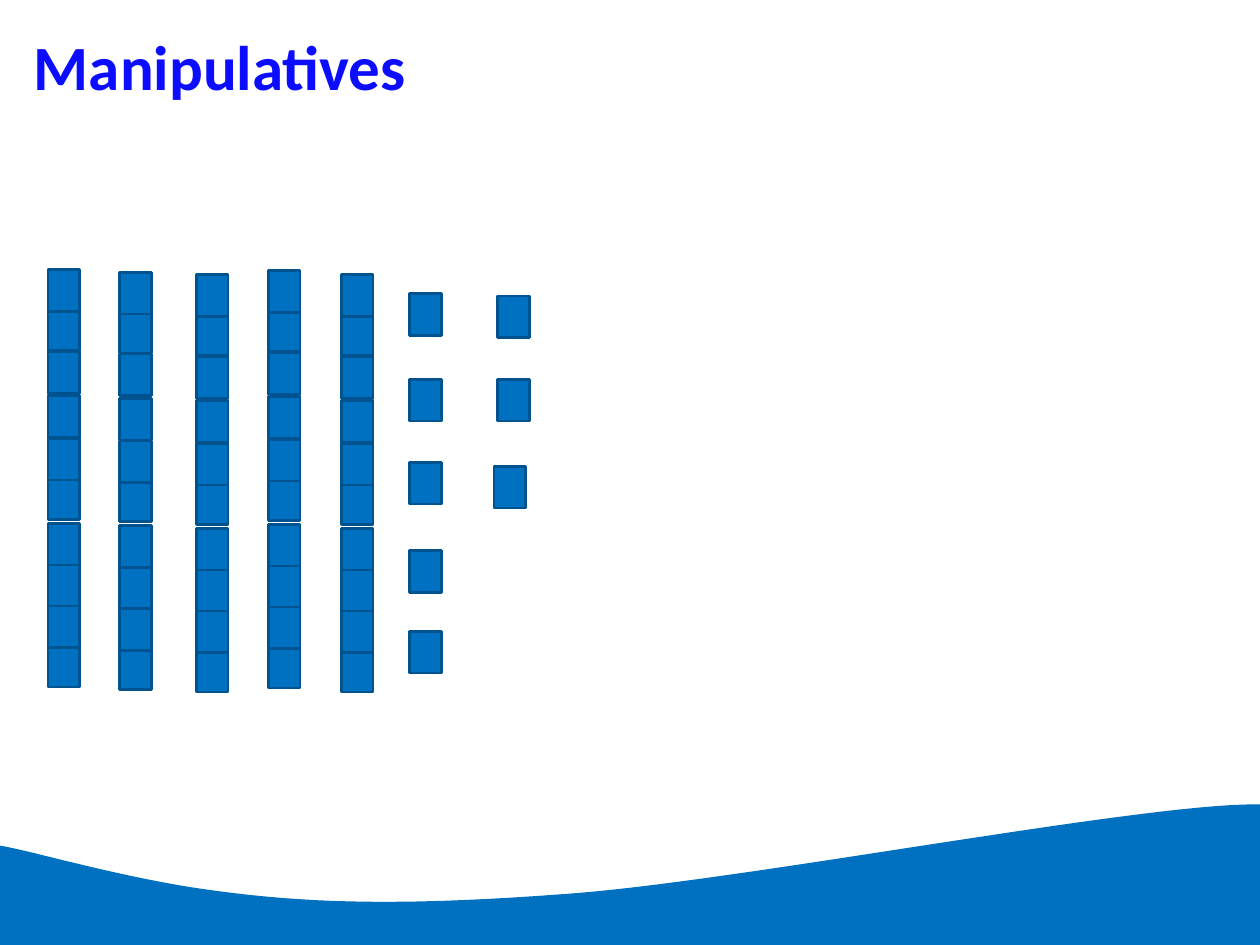
import pptx
import pptx.util
import pptx.dml.color
import pptx.enum.shapes
import pptx.enum.text
from pptx.util import Cm

BLUE = "0070C0"
DARK_BLUE = "00538E"
TITLE_BLUE = "0C0CFF"

BLOCK_WIDTH, BLOCK_HEIGHT = 0.64, 0.84

# Ten-rods: left and top of each, and the block offsets inside a rod
RODS = [(0.97, 5.44), (2.41, 5.49), (3.96, 5.54), (5.41, 5.46), (6.88, 5.54)]
ROD_OFFSETS = [0, 0.79, 1.65, 2.54, 3.4, 4.19, 5.11, 5.94, 6.78, 7.57]

# Single units: left and top of each
UNITS = [(8.26, top) for top in (5.92, 7.65, 9.32, 11.1, 12.73)]
UNITS += [(10.03, 5.97), (10.03, 7.65), (9.96, 9.4)]

# Upper edge of the wave, right to left: start, then cubic segments
WAVE_START = (25.6, 16.23)
WAVE_CURVES = [
    ((23.77, 16.05), (15.19, 17.73), (11.56, 18.01)),
    ((7.92, 18.29), (5.94, 18.21), (3.81, 17.88)),
    ((1.68, 17.53), (-0.2, 16.89), (-0.2, 17.07)),
]
WAVE_BOTTOM = [(-0.2, 19.1), (25.63, 19.18)]


def color(hex_value):
    return pptx.dml.color.RGBColor.from_string(hex_value)


def write_text(shape, text, size, font, hex_value, bold=False):
    frame = shape.text_frame
    frame.word_wrap = True
    frame.vertical_anchor = pptx.enum.text.MSO_ANCHOR.MIDDLE
    para = frame.paragraphs[0]
    para.alignment = pptx.enum.text.PP_ALIGN.LEFT
    span = para.add_run()
    span.text = text
    span.font.size = pptx.util.Pt(size)
    span.font.name = font
    span.font.bold = bold
    span.font.color.rgb = color(hex_value)


def curve_points(start, first, second, end, steps=30):
    """Points along a cubic curve, without its start."""
    points = []
    for step in range(1, steps + 1):
        t = step / steps
        weights = ((1 - t) ** 3, 3 * t * (1 - t) ** 2, 3 * t * t * (1 - t), t ** 3)
        points.append(tuple(
            sum(weight * value for weight, value in zip(weights, values))
            for values in zip(start, first, second, end)))
    return points


def add_wave(page):
    points = [WAVE_START]
    for curve in WAVE_CURVES:
        points += curve_points(points[-1], *curve)
    points += WAVE_BOTTOM
    corners = [(Cm(x), Cm(y)) for x, y in points]
    builder = page.shapes.build_freeform(*corners[0])
    builder.add_line_segments(corners[1:], close=True)
    wave = builder.convert_to_shape()
    wave.shadow.inherit = False
    wave.fill.solid()
    wave.fill.fore_color.rgb = color(BLUE)
    wave.line.fill.background()
    # Keep the wave behind everything else
    tree = page.shapes.element
    tree.remove(wave.element)
    tree.insert(2, wave.element)


def add_block(shapes, left, top):
    block = shapes.add_shape(
        pptx.enum.shapes.MSO_SHAPE.RECTANGLE,
        Cm(left), Cm(top), Cm(BLOCK_WIDTH), Cm(BLOCK_HEIGHT))
    block.shadow.inherit = False
    block.fill.solid()
    block.fill.fore_color.rgb = color(BLUE)
    block.line.color.rgb = color(DARK_BLUE)
    block.line.width = pptx.util.Pt(1.5)


def add_rod(page, left, top):
    rod = page.shapes.add_group_shape()
    # Lower blocks lie behind upper ones
    for offset in reversed(ROD_OFFSETS):
        add_block(rod.shapes, left, top + offset)


def main():
    deck = pptx.Presentation()
    deck.slide_width, deck.slide_height = Cm(25.4), Cm(19.05)
    page = deck.slides.add_slide(deck.slide_layouts[5])

    # Background wave and title
    add_wave(page)
    title = page.shapes.title
    title.left, title.top = Cm(0.43), Cm(0.43)
    title.width, title.height = Cm(22.86), Cm(1.78)
    write_text(title, "Manipulatives", size=36, font="Calibri",
               hex_value=TITLE_BLUE, bold=True)

    # Five tens and eight ones
    for left, top in RODS:
        add_rod(page, left, top)
    for left, top in UNITS:
        add_block(page.shapes, left, top)

    deck.save("out.pptx")


if __name__ == "__main__":
    main()
